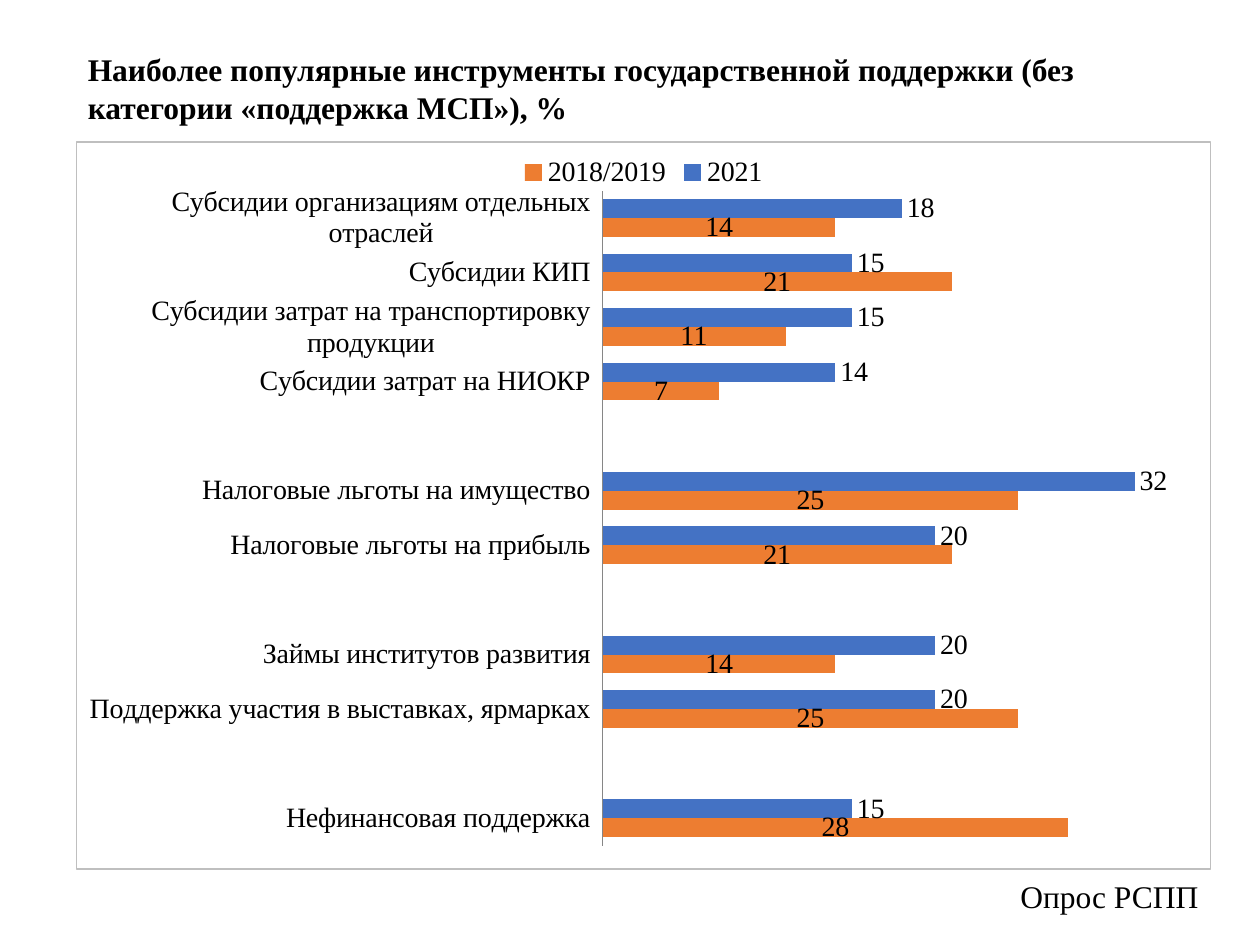
"""Build a slide with a bar chart of popular state support tools."""
from dataclasses import dataclass
from typing import Optional

from lxml.etree import fromstring
from pptx import Presentation
from pptx.chart.chart import Chart
from pptx.chart.data import CategoryChartData
from pptx.dml.color import RGBColor
from pptx.enum.chart import (XL_CHART_TYPE, XL_LABEL_POSITION,
                             XL_LEGEND_POSITION, XL_TICK_LABEL_POSITION,
                             XL_TICK_MARK)
from pptx.enum.text import MSO_AUTO_SIZE, PP_ALIGN
from pptx.oxml.ns import qn
from pptx.slide import Slide
from pptx.util import Cm, Pt

FONT = "Times New Roman"
BLACK = RGBColor(0x00, 0x00, 0x00)
BLUE = RGBColor(0x44, 0x72, 0xC4)
ORANGE = RGBColor(0xED, 0x7D, 0x31)
GRAY = RGBColor(0x86, 0x86, 0x86)
SILVER = RGBColor(0xBF, 0xBF, 0xBF)
C_NS = "http://schemas.openxmlformats.org/drawingml/2006/chart"
A_NS = "http://schemas.openxmlformats.org/drawingml/2006/main"


@dataclass
class Label:
    text: str
    left: float
    top: float
    width: float
    height: float
    align: PP_ALIGN = PP_ALIGN.LEFT
    bold: bool = False


@dataclass
class Series:
    name: str
    color: RGBColor
    spot: XL_LABEL_POSITION


@dataclass
class Row:
    name: str = ""
    now: Optional[int] = None
    past: Optional[int] = None


LABELS = [
    Label("Наиболее популярные инструменты государственной поддержки "
          "(без категории «поддержка МСП»), %", 1.52, 0.89, 20.55, 1.8, bold=True),
    Label("Опрос РСПП", 19.33, 17.55, 5.08, 1.03, PP_ALIGN.RIGHT),
]
SERIES = [
    Series("2021", BLUE, XL_LABEL_POSITION.OUTSIDE_END),
    Series("2018/2019", ORANGE, XL_LABEL_POSITION.CENTER),
]
ROWS = [
    Row("Субсидии организациям отдельных отраслей", 18, 14),
    Row("Субсидии КИП", 15, 21),
    Row("Субсидии затрат на транспортировку продукции", 15, 11),
    Row("Субсидии затрат на НИОКР", 14, 7),
    Row(),
    Row("Налоговые льготы на имущество", 32, 25),
    Row("Налоговые льготы на прибыль", 20, 21),
    Row(),
    Row("Займы институтов развития", 20, 14),
    Row("Поддержка участия в выставках, ярмарках", 20, 25),
    Row(),
    Row("Нефинансовая поддержка", 15, 28),
]


def add_label(slide: Slide, label: Label) -> None:
    box = slide.shapes.add_textbox(Cm(label.left), Cm(label.top),
                                   Cm(label.width), Cm(label.height))
    frame = box.text_frame
    frame.text = label.text
    frame.word_wrap = True
    frame.auto_size = MSO_AUTO_SIZE.SHAPE_TO_FIT_TEXT
    para = frame.paragraphs[0]
    para.alignment = label.align
    font = para.runs[0].font
    font.name, font.size, font.bold = FONT, Pt(18), label.bold
    font.color.rgb = BLACK


def set_frame(chart: Chart) -> None:
    chart.element.find(qn("c:chart")).addnext(fromstring(
        f'<c:spPr xmlns:c="{C_NS}" xmlns:a="{A_NS}"><a:noFill/><a:ln w="9525">'
        f'<a:solidFill><a:srgbClr val="{SILVER}"/></a:solidFill></a:ln></c:spPr>'))


def set_plot(chart: Chart, x: float, y: float, w: float, h: float) -> None:
    area = chart.element.find(qn("c:chart")).find(qn("c:plotArea"))
    for old in area.findall(qn("c:layout")):
        area.remove(old)
    sizes = "".join(f'<c:{key} val="{val}"/>'
                    for key, val in zip("xywh", (x, y, w, h)))
    area.insert(0, fromstring(
        f'<c:layout xmlns:c="{C_NS}"><c:manualLayout>'
        '<c:layoutTarget val="inner"/><c:xMode val="edge"/>'
        f'<c:yMode val="edge"/>{sizes}</c:manualLayout></c:layout>'))


def set_axes(chart: Chart) -> None:
    names, scale = chart.category_axis, chart.value_axis
    names.reverse_order = True
    names.major_tick_mark = names.minor_tick_mark = XL_TICK_MARK.NONE
    names.tick_label_position = XL_TICK_LABEL_POSITION.LOW
    names.has_major_gridlines = False
    names.format.line.color.rgb = GRAY
    names.format.line.width = Pt(0.75)
    scale.visible = False
    scale.has_major_gridlines = False
    scale.minimum_scale, scale.maximum_scale = 0, 35


def add_bars(slide: Slide) -> None:
    data = CategoryChartData(number_format="0")
    data.categories = [row.name for row in ROWS]
    for item, vals in zip(SERIES, zip(*((row.now, row.past) for row in ROWS))):
        data.add_series(item.name, vals)
    chart = slide.shapes.add_chart(XL_CHART_TYPE.BAR_CLUSTERED, Cm(1.53), Cm(2.85),
                                   Cm(22.89), Cm(14.68), data).chart
    chart.has_title = False
    chart.font.name, chart.font.size = FONT, Pt(16)
    chart.font.color.rgb = BLACK
    chart.has_legend = True
    chart.legend.position = XL_LEGEND_POSITION.TOP
    chart.legend.include_in_layout = False
    set_axes(chart)
    plot = chart.plots[0]
    plot.gap_width, plot.overlap, plot.vary_by_categories = 89, 0, False
    for item, bars in zip(SERIES, plot.series):
        bars.format.fill.solid()
        bars.format.fill.fore_color.rgb = item.color
        bars.invert_if_negative = False
        tags = bars.data_labels
        tags.show_value = True
        tags.number_format, tags.number_format_is_linked = "#,##0", False
        tags.position = item.spot
    set_frame(chart)
    set_plot(chart, 0.464, 0.067, 0.513, 0.901)


def main() -> None:
    deck = Presentation()
    deck.slide_width, deck.slide_height = Cm(25.4), Cm(19.05)
    slide = deck.slides.add_slide(deck.slide_layouts[6])
    add_bars(slide)
    for label in LABELS:
        add_label(slide, label)
    deck.save("out.pptx")


if __name__ == "__main__":
    main()
